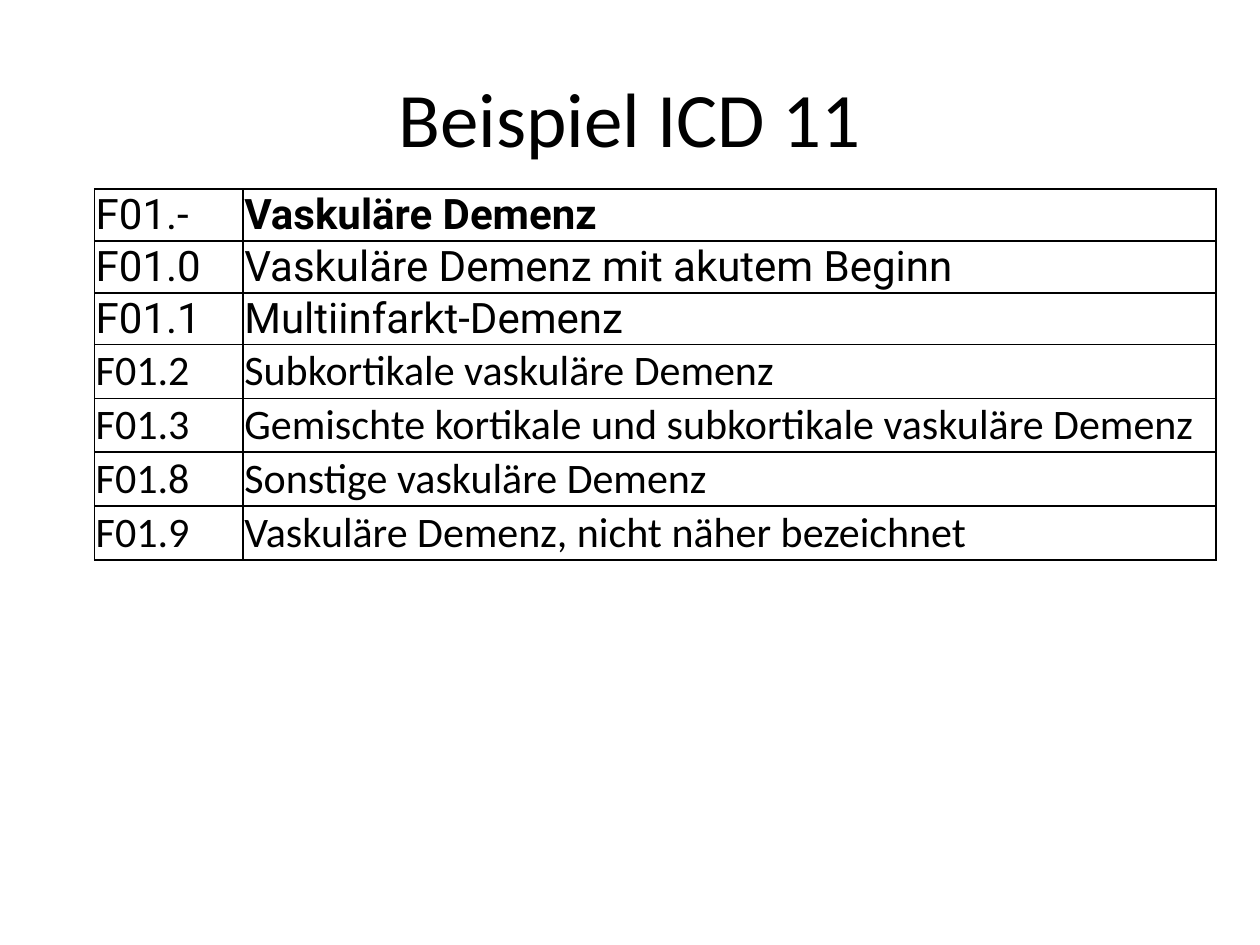
from lxml import etree
from pptx import Presentation
from pptx import util as u
from pptx.dml.color import RGBColor
from pptx.enum import text
from pptx.oxml.ns import qn

BLACK = RGBColor(0, 0, 0)
WIDTH, HEIGHT = u.Inches(10), u.Inches(7.5)

CODES = [
    ("F01.-", "Vaskuläre Demenz"),
    ("F01.0", "Vaskuläre Demenz mit akutem Beginn"),
    ("F01.1", "Multiinfarkt-Demenz"),
    ("F01.2", "Subkortikale vaskuläre Demenz"),
    ("F01.3", "Gemischte kortikale und subkortikale vaskuläre Demenz"),
    ("F01.8", "Sonstige vaskuläre Demenz"),
    ("F01.9", "Vaskuläre Demenz, nicht näher bezeichnet"),
]
ROBOTO_ROWS = 3


def write(frame, words, font="Calibri", size=24, bold=False,
          align=text.PP_ALIGN.LEFT):
    para = frame.paragraphs[0]
    para.alignment = align
    run = para.add_run()
    run.text = words
    run.font.name, run.font.size, run.font.bold = font, u.Pt(size), bold
    run.font.color.rgb = BLACK


def border(cell, width=1):
    props = cell._tc.get_or_add_tcPr()
    for spot, side in enumerate(("lnL", "lnR", "lnT", "lnB")):
        line = etree.Element(qn(f"a:{side}"), w=str(u.Pt(width)))
        fill = etree.SubElement(line, qn("a:solidFill"))
        etree.SubElement(fill, qn("a:srgbClr"), val=str(BLACK))
        props.insert(spot, line)


class Deck:
    """Holds the slide and places elements by shares of its size."""

    def __init__(self):
        self.prs = Presentation()
        self.prs.slide_width, self.prs.slide_height = WIDTH, HEIGHT
        self.slide = self.prs.slides.add_slide(self.prs.slide_layouts[5])

    def place(self, x, y, w, h):
        return int(x * WIDTH), int(y * HEIGHT), int(w * WIDTH), int(h * HEIGHT)

    def title(self, words, *box):
        shape = self.slide.shapes.title
        shape.left, shape.top, shape.width, shape.height = self.place(*box)
        shape.text_frame.vertical_anchor = text.MSO_ANCHOR.MIDDLE
        write(shape.text_frame, words, size=44, align=text.PP_ALIGN.CENTER)

    def table(self, rows, cols, *box):
        table = self.slide.shapes.add_table(
            len(rows), len(cols), *self.place(*box)).table
        table.first_row = table.horz_banding = False
        for col, width in zip(table.columns, cols):
            col.width = u.Inches(width)
        for r, row in enumerate(rows):
            roboto = r < ROBOTO_ROWS
            table.rows[r].height = u.Inches(0.4 if roboto else 0.42)
            for c, words in enumerate(row):
                cell = table.cell(r, c)
                cell.fill.background()
                border(cell)
                cell.margin_left = cell.margin_right = u.Inches(0.01)
                cell.margin_top = cell.margin_bottom = u.Inches(0.01)
                if roboto and c == 1:
                    cell.vertical_anchor = text.MSO_ANCHOR.MIDDLE
                write(cell.text_frame, words, bold=(r, c) == (0, 1),
                      font="Roboto" if roboto else "Calibri")


def main():
    deck = Deck()
    deck.title("Beispiel ICD 11", 0.05, 0.04, 0.9, 1 / 6)
    deck.table(CODES, (1.18, 7.72), 0.075, 0.2, 0.89, 0.39)
    deck.prs.save("out.pptx")


if __name__ == "__main__":
    main()
